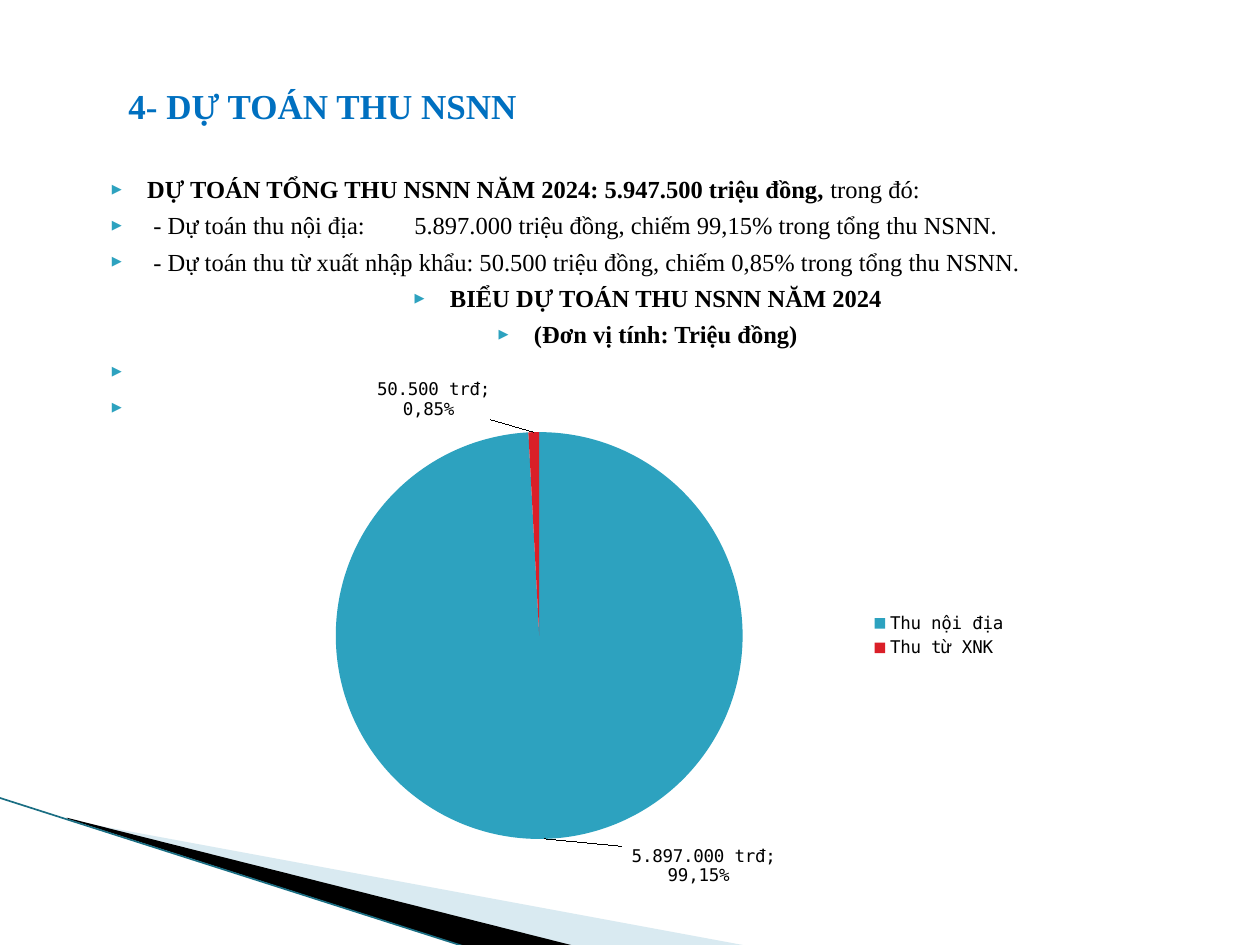
from dataclasses import dataclass
from typing import Optional

from lxml.etree import SubElement
from pptx import Presentation
from pptx.chart.data import CategoryChartData
from pptx.dml.color import RGBColor
from pptx.enum.chart import XL_CHART_TYPE, XL_LABEL_POSITION, XL_LEGEND_POSITION
from pptx.enum.shapes import MSO_CONNECTOR
from pptx.enum.text import MSO_ANCHOR, PP_ALIGN
from pptx.oxml import parse_xml
from pptx.oxml.ns import nsdecls, qn
from pptx.util import Inches, Pt

BLACK = RGBColor(0x00, 0x00, 0x00)
BLUE = RGBColor(0x00, 0x70, 0xC0)
TEAL = RGBColor(0x2D, 0xA2, 0xBF)
RED = RGBColor(0xDA, 0x1F, 0x28)
PALE = RGBColor(0xA0, 0xCB, 0xDC)
DEEP = RGBColor(0x1A, 0x6E, 0x83)
SERIF = "Times New Roman"
MONO = "DejaVu Sans Mono"


@dataclass
class Item:
    text: str
    bold: bool = False
    tail: str = ""
    align: Optional[PP_ALIGN] = None
    font: str = SERIF


@dataclass
class Wedge:
    points: list
    color: RGBColor
    alpha: int = 100


@dataclass
class Slice:
    name: str
    value: int
    label: str
    color: RGBColor
    shift: tuple


WEDGES = [
    Wedge([(0.55, 6.51), (5.95, 7.51), (4.56, 7.51), (0.55, 6.5)], PALE, 40),
    Wedge([(0.53, 6.49), (4.57, 7.51), (3.72, 7.52), (0.54, 6.5)], BLACK),
]
ITEMS = [
    Item("DỰ TOÁN TỔNG THU NSNN NĂM 2024: 5.947.500 triệu đồng, ", True, "trong đó:"),
    Item(" - Dự toán thu nội địa:\t5.897.000 triệu đồng, chiếm 99,15% trong tổng thu NSNN."),
    Item(" - Dự toán thu từ xuất nhập khẩu: 50.500 triệu đồng, chiếm 0,85% trong tổng thu NSNN."),
    Item("BIỂU DỰ TOÁN THU NSNN NĂM 2024", True, align=PP_ALIGN.CENTER),
    Item("(Đơn vị tính: Triệu đồng)", True, align=PP_ALIGN.CENTER),
    Item("\u00a0", True, font=MONO),
    Item("\u00a0", font=MONO),
]
SLICES = [
    Slice("Thu nội địa", 5897000, " 5.897.000 trđ; 99,15%", TEAL, (0.19, 0)),
    Slice("Thu từ XNK", 50500, " 50.500 trđ; 0,85%", RED, (-0.13, -0.01)),
]


def add_run(para, text: str, *, size: float, color: RGBColor, font: str = SERIF, bold: bool = False):
    run = para.add_run()
    run.text = text
    run.font.name = font
    run.font.size = Pt(size)
    run.font.bold = bold
    run.font.color.rgb = color


def add_frame(slide, left: float, top: float, width: float, height: float):
    box = slide.shapes.add_textbox(Inches(left), Inches(top), Inches(width), Inches(height))
    box.text_frame.word_wrap = True
    return box.text_frame


def add_wedge(slide, wedge: Wedge):
    first, *rest = [(Inches(x), Inches(y)) for x, y in wedge.points]
    form = slide.shapes.build_freeform(*first)
    form.add_line_segments(rest, close=True)
    shape = form.convert_to_shape()
    shape.shadow.inherit = False
    shape.fill.solid()
    shape.fill.fore_color.rgb = wedge.color
    shape.line.fill.background()
    if wedge.alpha < 100:
        tint = next(shape.element.spPr.iter(qn("a:srgbClr")))
        SubElement(tint, qn("a:alpha")).set("val", str(wedge.alpha * 1000))


def add_edge(slide):
    edge = slide.shapes.add_connector(
        MSO_CONNECTOR.STRAIGHT, Inches(-0.01), Inches(6.33), Inches(3.71), Inches(7.52))
    edge.line.color.rgb = DEEP
    edge.line.width = Pt(0.95)
    SubElement(edge.element.spPr, qn("a:effectLst"))


def set_bullet(para):
    props = para._p.get_or_add_pPr()
    props.set("marL", str(Inches(0.4)))
    props.set("indent", str(Inches(-0.28)))
    for part in (
        f'<a:buClr {nsdecls("a")}><a:srgbClr val="{TEAL}"/></a:buClr>',
        f'<a:buSzPct {nsdecls("a")} val="68000"/>',
        f'<a:buFont {nsdecls("a")} typeface="{MONO}"/>',
        f'<a:buChar {nsdecls("a")} char="▶"/>',
        f'<a:tabLst {nsdecls("a")}><a:tab pos="{Inches(2.52)}" algn="l"/></a:tabLst>',
    ):
        props.append(parse_xml(part))


def add_list(slide, items: list):
    frame = add_frame(slide, 0.67, 1.33, 8.83, 5.24)
    for rank, item in enumerate(items):
        para = frame.add_paragraph() if rank else frame.paragraphs[0]
        set_bullet(para)
        para.alignment = item.align
        if rank:
            para.space_before = Pt(4)
        add_run(para, item.text, size=14, color=BLACK, font=item.font, bold=item.bold)
        if item.tail:
            add_run(para, item.tail, size=14, color=BLACK)


def set_layout(node, after: str, **values):
    marks = "".join(f'<c:{key} val="{val}"/>' for key, val in values.items())
    old = node.find(qn("c:layout"))
    if old is not None:
        node.remove(old)
    layout = parse_xml(
        f'<c:layout {nsdecls("c")}><c:manualLayout>{marks}</c:manualLayout></c:layout>')
    if after:
        node.find(qn(after)).addnext(layout)
    else:
        node.insert(0, layout)


def add_pie(slide, slices: list):
    data = CategoryChartData(number_format="#,##0")
    data.categories = [part.name for part in slices]
    data.add_series("Series 1", [part.value for part in slices])
    chart = slide.shapes.add_chart(
        XL_CHART_TYPE.PIE, Inches(1.67), Inches(2.92), Inches(6.42), Inches(4.25), data).chart
    chart.has_title = False
    chart.font.size = Pt(10)
    chart.font.name = MONO
    chart.font.color.rgb = BLACK
    chart.has_legend = True
    chart.legend.position = XL_LEGEND_POSITION.RIGHT
    chart.legend.include_in_layout = False
    plot = chart.plots[0]
    plot.vary_by_categories = True
    series = plot.series[0]
    labels = series.data_labels
    labels.show_value = True
    labels.show_percentage = True
    labels.number_format = "#,##0"
    labels.number_format_is_linked = False
    labels.position = XL_LABEL_POSITION.OUTSIDE_END
    for rank, part in enumerate(slices):
        point = series.points[rank]
        point.format.fill.solid()
        point.format.fill.fore_color.rgb = part.color
        label = point.data_label
        add_run(label.text_frame.paragraphs[0], part.label, size=10, color=BLACK, font=MONO)
        label.position = XL_LABEL_POSITION.OUTSIDE_END
    for node, part in zip(series._element.iter(qn("c:dLbl")), slices):
        set_layout(node, "c:idx", x=part.shift[0], y=part.shift[1])
        node.find(qn("c:showPercent")).set("val", "1")
    area = next(chart._chartSpace.iter(qn("c:plotArea")))
    set_layout(area, "", layoutTarget="inner", xMode="edge", yMode="edge",
               x=0.155, y=0.12, w=0.503, h=0.76)


def main():
    deck = Presentation()
    deck.slide_width = Inches(10)
    deck.slide_height = Inches(7.5)
    slide = deck.slides.add_slide(deck.slide_layouts[6])
    for wedge in WEDGES:
        add_wedge(slide, wedge)
    add_edge(slide)
    add_list(slide, ITEMS)
    title = add_frame(slide, 0.92, 0.42, 8.58, 0.83)
    title.vertical_anchor = MSO_ANCHOR.MIDDLE
    add_run(title.paragraphs[0], "4- DỰ TOÁN THU NSNN", size=20, color=BLUE, bold=True)
    add_pie(slide, SLICES)
    deck.save("out.pptx")


if __name__ == "__main__":
    main()
